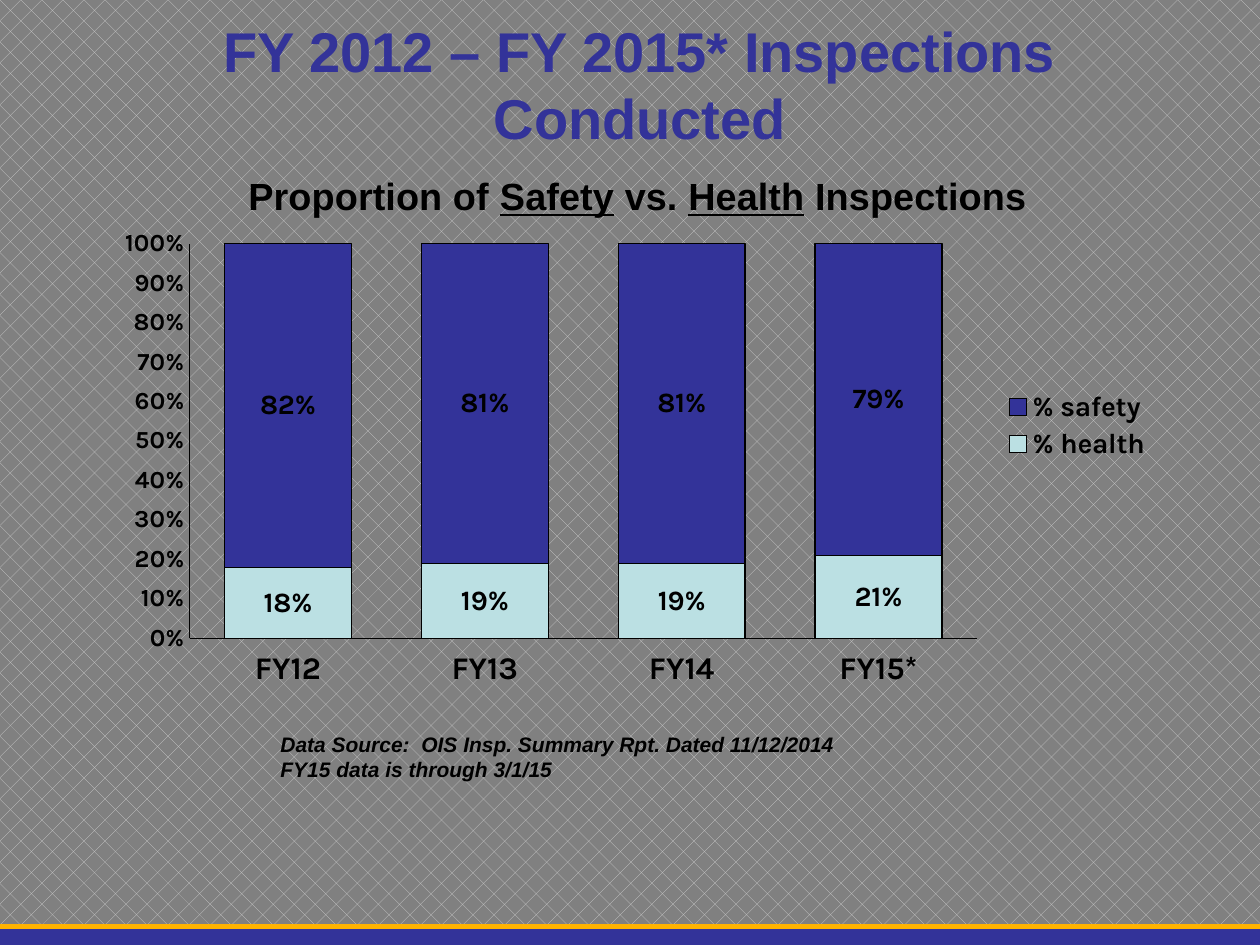
from dataclasses import dataclass

from lxml import etree
from pptx import Presentation
from pptx.chart.data import CategoryChartData
from pptx.dml.color import RGBColor
from pptx.enum.chart import XL_CHART_TYPE as ChartType
from pptx.enum.chart import XL_LEGEND_POSITION as LegendPosition
from pptx.enum.chart import XL_TICK_LABEL_POSITION as TickLabels
from pptx.enum.chart import XL_TICK_MARK as TickMark
from pptx.enum.dml import MSO_PATTERN as Pattern
from pptx.enum.shapes import MSO_SHAPE as Shape
from pptx.enum.text import MSO_ANCHOR as Anchor
from pptx.enum.text import MSO_AUTO_SIZE as AutoSize
from pptx.enum.text import PP_ALIGN as Align
from pptx.oxml.ns import qn
from pptx.util import Pt

PX = 914400 / 126
PAGE_WIDTH, PAGE_HEIGHT = 1260, 945


@dataclass(frozen=True)
class Theme:
    navy: str = "333399"
    gold: str = "FFB300"
    pale: str = "BBE0E3"
    black: str = "000000"
    weave: str = "CFCFCF"
    ground: str = "808080"
    text_face: str = "Arial"
    chart_face: str = "Karla"
    title: float = 32
    chart_title: float = 21.6
    category: float = 18
    label: float = 16
    scale: float = 14
    note: float = 12


THEME = Theme()
YEARS = ["FY12", "FY13", "FY14", "FY15*"]
SERIES = [
    ("% health", [0.18, 0.19, 0.19, 0.21], THEME.pale),
    ("% safety", [0.82, 0.81, 0.81, 0.79], THEME.navy),
]
CHART_TITLE = [("Proportion of ", False), ("Safety", True), (" vs. ", False),
               ("Health", True), (" Inspections", False)]
NOTES = ["Data Source:  OIS Insp. Summary Rpt. Dated 11/12/2014",
         "FY15 data is through 3/1/15"]


def emu(*lengths):
    return [round(length * PX) for length in lengths]


def color(code):
    return RGBColor.from_string(code)


def style(font, size, face=THEME.text_face, code=THEME.black):
    font.size, font.name, font.bold = Pt(size), face, True
    font.color.rgb = color(code)


def outline(line, width):
    line.color.rgb = color(THEME.black)
    line.width = Pt(width)


def set_layout(parent, index, frame, place, inner=False):
    """Fix a chart part at place (x, y and optional size) as shares of frame."""
    for old in parent.findall(qn("c:layout")):
        parent.remove(old)
    layout = etree.Element(qn("c:layout"))
    manual = etree.SubElement(layout, qn("c:manualLayout"))
    settings = [("layoutTarget", "inner")] if inner else []
    settings += [("xMode", "edge"), ("yMode", "edge")]
    settings += [(name, f"{length / frame[2 + i % 2]:.3f}")
                 for i, (name, length) in enumerate(zip("xywh", place))]
    for name, value in settings:
        etree.SubElement(manual, qn(f"c:{name}")).set("val", value)
    parent.insert(index, layout)


def paint_background(page):
    fill = page.background.fill
    fill.patterned()
    fill.pattern = Pattern.DIAGONAL_BRICK
    fill.fore_color.rgb = color(THEME.weave)
    fill.back_color.rgb = color(THEME.ground)


def add_footer_band(page, frame):
    left, top, width, height = frame
    for depth, code in ((height, THEME.navy), (5, THEME.gold)):
        band = page.shapes.add_shape(Shape.RECTANGLE, *emu(left, top, width, depth))
        band.shadow.inherit = False
        band.fill.solid()
        band.fill.fore_color.rgb = color(code)
        band.line.fill.background()


def place_title(page, frame):
    box = page.shapes.title
    box.left, box.top, box.width, box.height = emu(*frame)
    text = box.text_frame
    text.text = "FY 2012 – FY 2015* Inspections Conducted"
    text.word_wrap, text.auto_size = True, AutoSize.NONE
    text.vertical_anchor = Anchor.MIDDLE
    para = text.paragraphs[0]
    para.alignment = Align.CENTER
    style(para.runs[0].font, THEME.title, code=THEME.navy)


def format_axis(axis, size):
    axis.major_tick_mark = axis.minor_tick_mark = TickMark.NONE
    axis.has_major_gridlines = False
    style(axis.tick_labels.font, size, THEME.chart_face)
    outline(axis.format.line, 0.25)


def format_chart_title(chart, frame):
    chart.has_title = True
    title = chart.chart_title
    para = title.text_frame.paragraphs[0]
    for words, underlined in CHART_TITLE:
        span = para.add_run()
        span.text = words
        style(span.font, THEME.chart_title)
        span.font.underline = underlined
    set_layout(title._element, 1, frame, (140, 23))


def format_series(series, code):
    series.format.fill.solid()
    series.format.fill.fore_color.rgb = color(code)
    outline(series.format.line, 0.75)
    labels = series.data_labels
    labels.show_value = True
    labels.number_format, labels.number_format_is_linked = "0%", False
    style(labels.font, THEME.label, THEME.chart_face)


def add_inspection_chart(page, frame):
    data = CategoryChartData(number_format="0%")
    data.categories = YEARS
    for name, values, _ in SERIES:
        data.add_series(name, values)
    chart = page.shapes.add_chart(
        ChartType.COLUMN_STACKED_100, *emu(*frame), data).chart
    style(chart.font, THEME.category)
    format_chart_title(chart, frame)

    format_axis(chart.category_axis, THEME.category)
    chart.category_axis.tick_label_position = TickLabels.LOW
    scale = chart.value_axis
    format_axis(scale, THEME.scale)
    scale.minimum_scale, scale.maximum_scale, scale.major_unit = 0, 1, 0.1
    scale.tick_labels.number_format = "0%"
    scale.tick_labels.number_format_is_linked = False

    plot = chart.plots[0]
    plot.gap_width, plot.overlap = 55, 100
    for series, (_, _, code) in zip(plot.series, SERIES):
        format_series(series, code)
    plot_area = chart._chartSpace.chart.plotArea
    set_layout(plot_area, 0, frame, (85, 97, 787, 395), inner=True)

    chart.has_legend = True
    legend = chart.legend
    legend.position = LegendPosition.RIGHT
    legend.include_in_layout = False
    style(legend.font, THEME.label, THEME.chart_face)
    set_layout(legend._element, 1, frame, (895, 239))


def add_source_note(page, frame):
    text = page.shapes.add_textbox(*emu(*frame)).text_frame
    text.word_wrap, text.auto_size = False, AutoSize.SHAPE_TO_FIT_TEXT
    text.text = "\n".join(NOTES)
    for para in text.paragraphs:
        font = para.runs[0].font
        style(font, THEME.note)
        font.italic = True


def main():
    deck = Presentation()
    deck.slide_width, deck.slide_height = emu(PAGE_WIDTH, PAGE_HEIGHT)
    page = deck.slides.add_slide(deck.slide_layouts[5])
    paint_background(page)
    add_footer_band(page, (0, 924, PAGE_WIDTH, 21))
    place_title(page, (73, 42, 1134, 84))
    add_inspection_chart(page, (105, 147, 1057, 553))
    add_source_note(page, (268, 725, 585, 63))
    deck.save("out.pptx")


if __name__ == "__main__":
    main()
